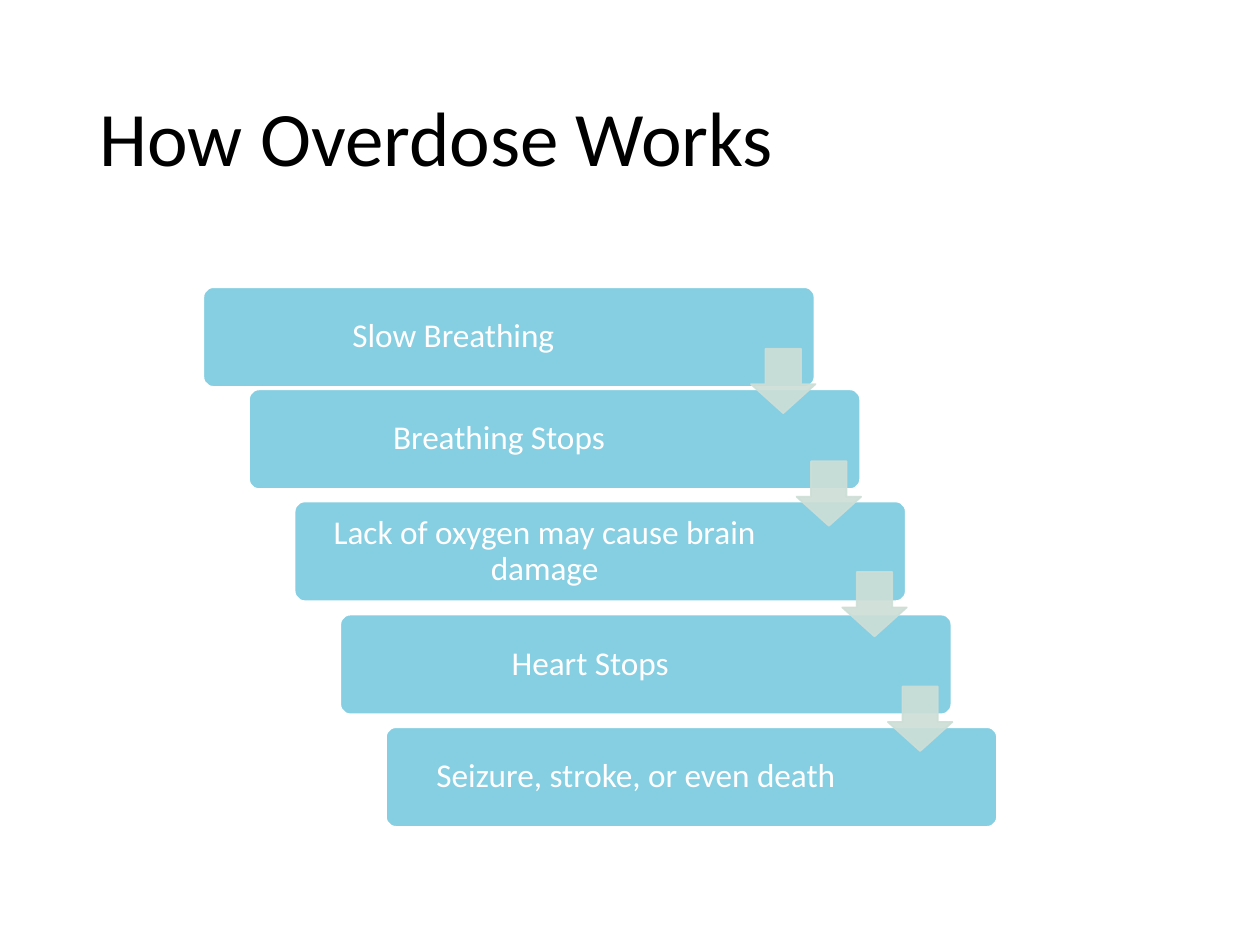
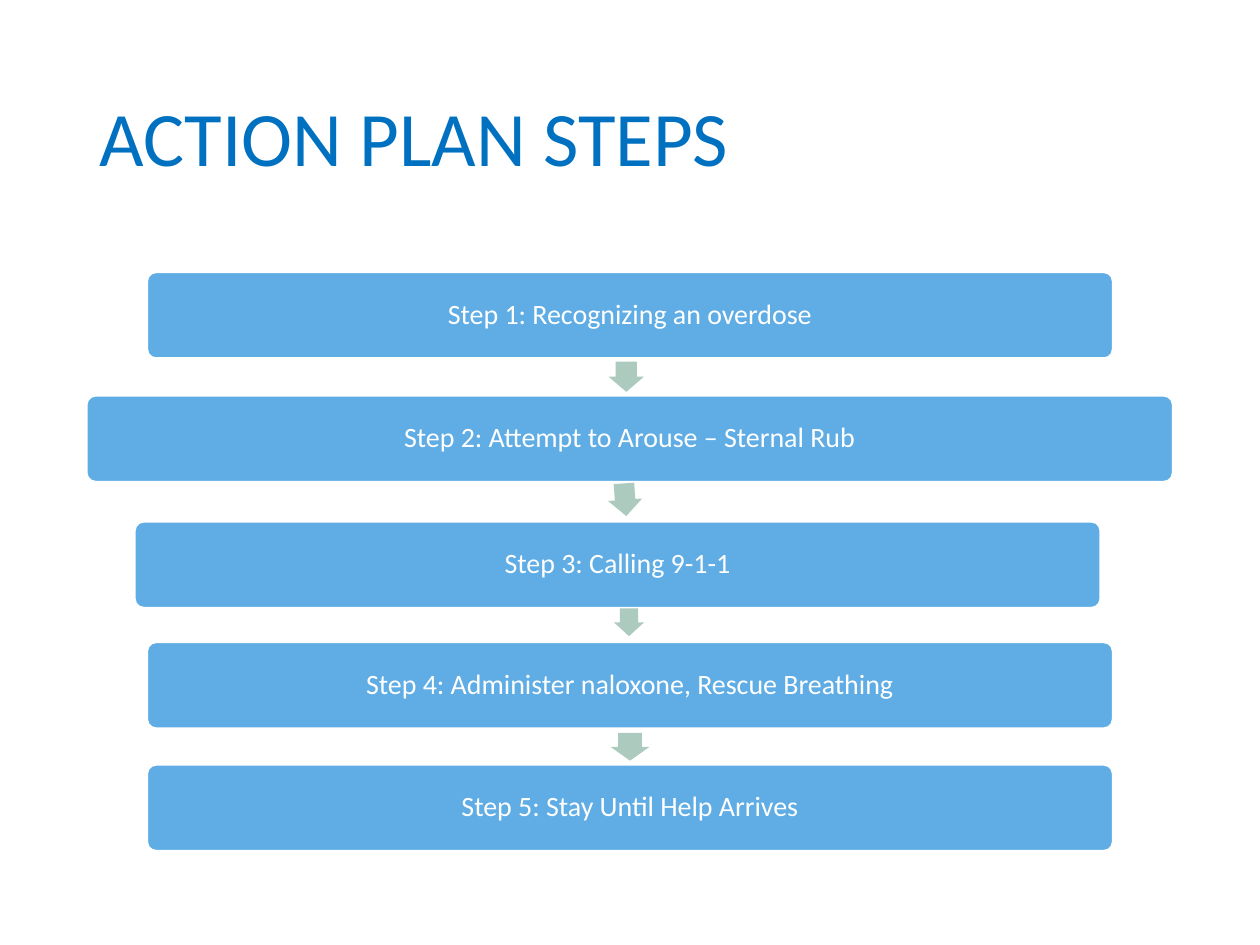
from dataclasses import dataclass
from typing import Optional

from lxml import etree
from pptx import Presentation
from pptx.dml.color import RGBColor
from pptx.enum.shapes import MSO_SHAPE
from pptx.enum.text import MSO_ANCHOR, MSO_AUTO_SIZE, PP_ALIGN
from pptx.oxml.ns import qn
from pptx.util import Cm, Pt

ROUND = MSO_SHAPE.ROUNDED_RECTANGLE
DOWN = MSO_SHAPE.DOWN_ARROW
RIGHT = MSO_SHAPE.RIGHT_ARROW
MIDDLE = MSO_ANCHOR.MIDDLE
LEFT = PP_ALIGN.LEFT
CENTER = PP_ALIGN.CENTER
NO_FIT = MSO_AUTO_SIZE.NONE


@dataclass(frozen=True)
class Theme:
    font: str = "Calibri"
    white: str = "FFFFFF"
    black: str = "000000"
    blue: str = "0070C0"
    aqua: str = "86CFE2"
    sky: str = "5FADE4"
    mist: str = "CDDED6"
    sage: str = "ACCABE"
    title: int = 44
    stage: int = 19
    step: int = 16
    spacing: float = 0.9
    alpha: int = 90


@dataclass(frozen=True)
class Box:
    text: str
    left: float
    top: float
    width: float
    height: float
    fill: str
    size: int
    inset: float
    right: float


@dataclass(frozen=True)
class Arrow:
    kind: int
    left: float
    top: float
    width: float
    height: float
    fill: str
    neck: float
    head: float
    turn: float = 0
    alpha: Optional[int] = None


THEME = Theme()
MARGIN = 1.75
WIDE = 21.89


def write(frame, text: str, size: int, color: str, align: int) -> None:
    frame.word_wrap = True
    frame.auto_size = NO_FIT
    frame.vertical_anchor = MIDDLE
    para = frame.paragraphs[0]
    para.alignment = align
    para.line_spacing = THEME.spacing
    run = para.add_run()
    run.text = text
    run.font.name = THEME.font
    run.font.size = Pt(size)
    run.font.color.rgb = RGBColor.from_string(color)


def add_shape(slide, kind: int, item, adjust: tuple):
    shape = slide.shapes.add_shape(
        kind, Cm(item.left), Cm(item.top), Cm(item.width), Cm(item.height))
    shape.shadow.inherit = False
    shape.fill.solid()
    shape.fill.fore_color.rgb = RGBColor.from_string(item.fill)
    for i, value in enumerate(adjust):
        shape.adjustments[i] = value
    return shape


def edge(shape, color: str) -> None:
    shape.line.width = Pt(1)
    shape.line.color.rgb = RGBColor.from_string(color)


def draw_box(slide, box: Box) -> None:
    shape = add_shape(slide, ROUND, box, (0.1,))
    edge(shape, THEME.white)
    frame = shape.text_frame
    frame.margin_left = frame.margin_top = frame.margin_bottom = Cm(box.inset)
    frame.margin_right = Cm(box.right)
    write(frame, box.text, box.size, THEME.white, CENTER)


def draw_arrow(slide, arrow: Arrow) -> None:
    shape = add_shape(slide, arrow.kind, arrow, (arrow.neck, arrow.head))
    shape.rotation = arrow.turn
    if arrow.alpha is None:
        shape.line.fill.background()
        return
    edge(shape, arrow.fill)
    for color in shape.element.spPr.iter(qn("a:srgbClr")):
        alpha = etree.SubElement(color, qn("a:alpha"))
        alpha.set("val", str(arrow.alpha * 1000))


def add_slide(deck, text: str, color: str):
    slide = deck.slides.add_slide(deck.slide_layouts[5])
    title = slide.shapes.title
    title.left, title.top = Cm(MARGIN), Cm(1.02)
    title.width, title.height = Cm(WIDE), Cm(3.68)
    write(title.text_frame, text, THEME.title, color, LEFT)
    return slide


def add_stages(deck) -> None:
    slide = add_slide(deck, "How Overdose Works", THEME.black)
    shift = 0.92
    stages = (
        ("Slow Breathing", 5.79),
        ("Breathing Stops", 7.85),
        ("Lack of oxygen may cause brain damage", 10.11),
        ("Heart Stops", 12.39),
        ("Seizure, stroke, or even death", 14.66),
    )
    for i, (text, top) in enumerate(stages):
        draw_box(slide, Box(text, 4.1 + i * shift, top, 12.32, 2.01,
                            THEME.aqua, THEME.stage, 0.2, 2.44))
    for i, top in enumerate((7.03, 9.3, 11.53, 13.84)):
        draw_arrow(slide, Arrow(DOWN, 15.14 + i * shift, top, 1.3, 1.3,
                                THEME.mist, 0.55, 0.45, alpha=THEME.alpha))


def add_steps(deck) -> None:
    slide = add_slide(deck, "ACTION PLAN STEPS", THEME.blue)
    inner, narrow = 2.97, 19.46
    steps = (
        ("Step 1: Recognizing an overdose", inner, 5.49, narrow),
        ("Step 2: Attempt to Arouse – Sternal Rub", MARGIN, 7.98, WIDE),
        ("Step 3: Calling 9-1-1", 2.72, 10.52, narrow),
        ("Step 4: Administer naloxone, Rescue Breathing", inner, 12.95, narrow),
        ("Step 5: Stay Until Help Arrives", inner, 15.42, narrow),
    )
    for text, left, top, width in steps:
        draw_box(slide, Box(text, left, top, width, 1.73,
                            THEME.sky, THEME.step, 0.18, 0.18))
    arrows = (
        (12.32, 7.24, 0.61, 0.71, 90),
        (12.27, 9.73, 0.66, 0.69, 85.9),
        (12.4, 12.24, 0.56, 0.61, 90),
        (12.42, 14.66, 0.56, 0.79, 90),
    )
    for left, top, width, height, turn in arrows:
        draw_arrow(slide, Arrow(RIGHT, left, top, width, height,
                                THEME.sage, 0.6, 0.5, turn))


def main() -> None:
    deck = Presentation()
    deck.slide_width, deck.slide_height = Cm(25.4), Cm(19.05)
    add_stages(deck)
    add_steps(deck)
    deck.save("out.pptx")


if __name__ == "__main__":
    main()
